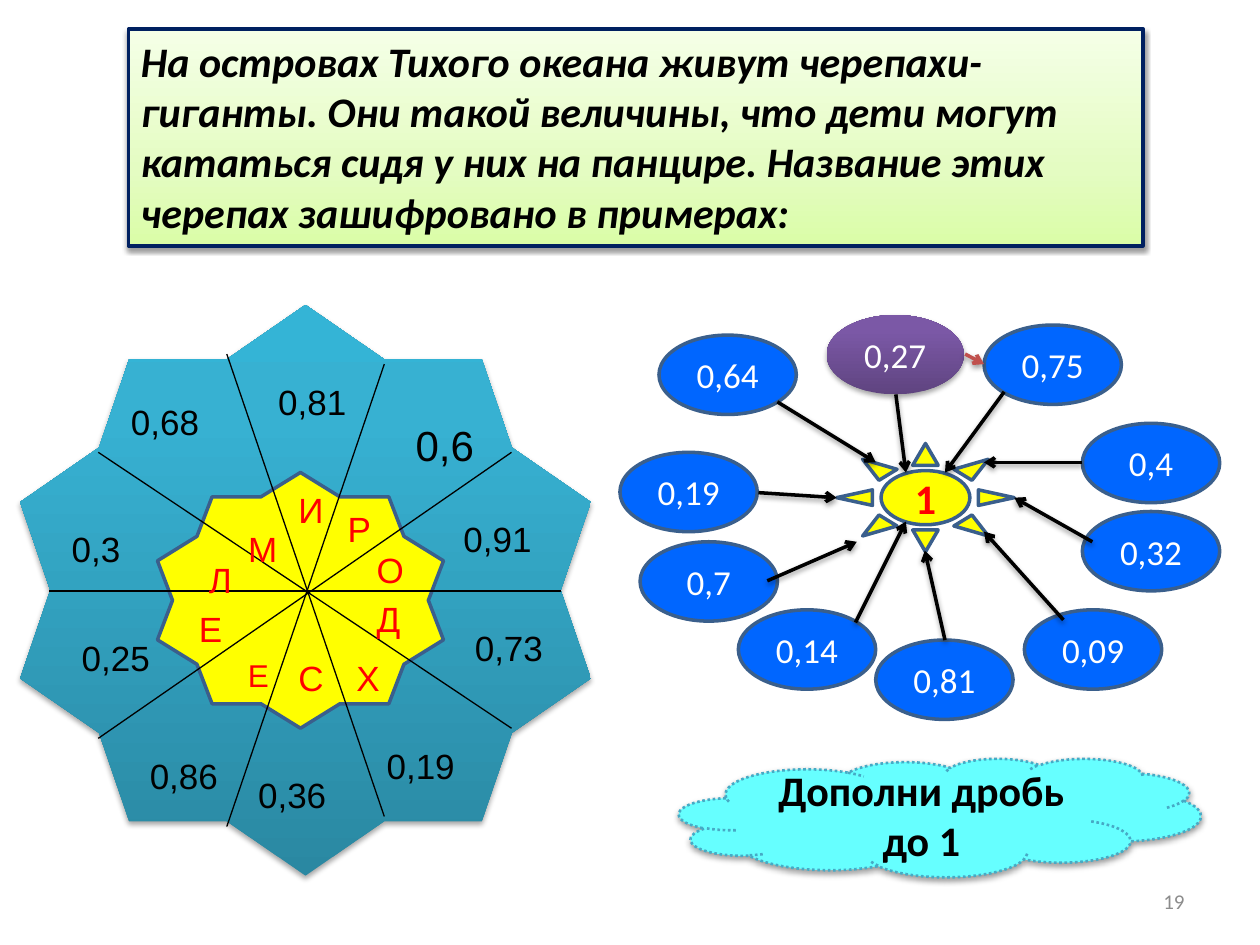
import copy

import pptx
import pptx.dml.color
import pptx.enum.dml
import pptx.enum.shapes
import pptx.enum.text
import pptx.oxml
import pptx.oxml.ns
import pptx.util

Inches = pptx.util.Inches
Pt = pptx.util.Pt
SHAPE = pptx.enum.shapes.MSO_SHAPE
ALIGN = pptx.enum.text.PP_ALIGN
ANCHOR = pptx.enum.text.MSO_ANCHOR
qn = pptx.oxml.ns.qn

COLORS = {
    "black": "000000", "white": "FFFFFF", "red": "FF0000", "gray": "8C8C8C",
    "navy": "002060", "outline": "3A5F8C", "blue": "0066FF", "yellow": "FFFF00",
    "cyan": "66FFFF", "teal": "46AAC5", "brick": "C0504D",
}
# Gradient stops run from the bottom edge to the top edge.
GRADIENTS = {
    "lime": [(0, "DAFDA7"), (0.35, "E4FCC2"), (1, "F5FFE7")],
    "sea": [(0, "2A88A2"), (0.8, "37B1D2"), (1, "34B4D6")],
    "purple": [(0, "5F4480"), (0.8, "7B58A6"), (1, "7C57A8")],
}
STORY = ("На островах Тихого океана живут черепахи-гиганты. Они такой величины, "
         "что дети могут кататься сидя у них на панцире. Название этих черепах "
         "зашифровано в примерах:")
WHEEL_SPOKES = [
    (1.8, 2.81, 3.05, 6.48), (3.05, 2.89, 1.8, 6.56), (0.78, 3.59, 4.06, 5.78),
    (0.39, 4.69, 4.45, 4.69), (0.78, 5.86, 4.06, 3.59),
]
# text, left, top, width, size
WHEEL_NUMBERS = [
    ("0,81", 2.11, 2.97, 0.86, 20), ("0,6", 3.2, 3.28, 0.7, 24),
    ("0,91", 3.58, 4.06, 0.87, 20), ("0,73", 3.67, 4.92, 0.86, 20),
    ("0,19", 2.97, 5.86, 0.86, 20), ("0,36", 1.95, 6.09, 0.78, 20),
    ("0,86", 1.09, 5.94, 0.78, 20), ("0,25", 0.55, 5, 0.86, 20),
    ("0,3", 0.47, 4.14, 0.78, 20), ("0,68", 0.94, 3.13, 0.91, 20),
]
WHEEL_LETTERS = [
    ("И", 2.27, 3.83, 0.23, 20), ("Р", 2.66, 3.98, 0.39, 20),
    ("О", 2.89, 4.3, 0.47, 20), ("Д", 2.89, 4.69, 0.47, 20),
    ("Х", 2.73, 5.16, 0.39, 20), ("С", 2.27, 5.16, 0.39, 20),
    ("Е", 1.87, 5.16, 0.23, 18), ("Е", 1.48, 4.77, 0.62, 20),
    ("Л", 1.56, 4.38, 0.31, 20), ("М", 1.87, 4.14, 0.55, 20),
]
FRACTIONS = [
    ("0,75", 7.81, 2.58), ("0,64", 5.23, 2.66), ("0,19", 4.92, 3.59),
    ("0,7", 5.08, 4.3), ("0,14", 5.86, 4.84), ("0,81", 6.95, 5.08),
    ("0,09", 8.13, 4.84), ("0,32", 8.59, 4.06), ("0,4", 8.59, 3.36),
]
SUN_ARROWS = [
    (7.97, 3.11, 7.5, 3.75), (6.02, 3.91, 6.64, 3.95), (6.09, 4.61, 6.8, 4.3),
    (6.79, 4.94, 7.19, 4.14), (7.5, 5.08, 7.34, 4.37), (8.67, 4.3, 8.05, 3.95),
    (8.59, 3.67, 7.81, 3.67), (7.11, 3.13, 7.19, 3.75),
    (6.17, 3.19, 6.95, 3.67), (8.44, 4.92, 7.81, 4.22),
]


def rgb(name):
    return pptx.dml.color.RGBColor.from_string(COLORS[name])


def add_shadow(shape, opacity=38, distance=1.6):
    properties = shape._element.spPr
    effects = properties.find(qn("a:effectLst"))
    if effects is None:
        effects = pptx.oxml.parse_xml(f"<a:effectLst {pptx.oxml.ns.nsdecls('a')}/>")
        properties.append(effects)
    effects.append(pptx.oxml.parse_xml(
        f"<a:outerShdw {pptx.oxml.ns.nsdecls('a')} blurRad='{Pt(3.1)}' "
        f"dist='{Pt(distance)}' dir='5400000' rotWithShape='0'>"
        f"<a:srgbClr val='000000'><a:alpha val='{opacity * 1000}'/></a:srgbClr>"
        "</a:outerShdw>"))


def fill_gradient(shape, name):
    shape.fill.gradient()
    shape.fill.gradient_angle = 90
    stop_list = shape._element.spPr.find(qn("a:gradFill")).find(qn("a:gsLst"))
    stop_list.insert(1, copy.deepcopy(stop_list[0]))
    for stop, (position, color) in zip(shape.fill.gradient_stops, GRADIENTS[name]):
        stop.position = position
        stop.color.rgb = pptx.dml.color.RGBColor.from_string(color)


def write(shape, text, size, color, font="Calibri", align=ALIGN.CENTER,
          anchor=ANCHOR.MIDDLE, bold=False, italic=False):
    frame = shape.text_frame
    frame.word_wrap = True
    frame.vertical_anchor = anchor
    para = frame.paragraphs[0]
    para.alignment = align
    span = para.add_run()
    span.text = text
    span.font.name = font
    span.font.size = Pt(size)
    span.font.color.rgb = rgb(color)
    span.font.bold = bold
    span.font.italic = italic


def add_shape(parent, kind, place, fill, outline=None, width=2):
    shape = parent.shapes.add_shape(kind, *map(Inches, place))
    shape.shadow.inherit = False
    if fill in GRADIENTS:
        fill_gradient(shape, fill)
    else:
        shape.fill.solid()
        shape.fill.fore_color.rgb = rgb(fill)
    if outline:
        shape.line.color.rgb = rgb(outline)
        shape.line.width = Pt(width)
    else:
        shape.line.fill.background()
    return shape


def add_label(parent, text, place, size, color, **style):
    box = parent.shapes.add_textbox(*map(Inches, place))
    write(box, text, size, color, **style)


def add_line(parent, ends, color="black", width=0.75, arrow=False):
    line = parent.shapes.add_connector(
        pptx.enum.shapes.MSO_CONNECTOR.STRAIGHT, *map(Inches, ends))
    line.line.color.rgb = rgb(color)
    line.line.width = Pt(width)
    properties = line._element.spPr
    properties.append(pptx.oxml.parse_xml(
        f"<a:effectLst {pptx.oxml.ns.nsdecls('a')}/>"))
    if arrow:
        properties.find(qn("a:ln")).append(pptx.oxml.parse_xml(
            f"<a:tailEnd {pptx.oxml.ns.nsdecls('a')} type='arrow'/>"))
        add_shadow(line)


def add_story(page):
    panel = add_shape(page, SHAPE.RECTANGLE, (1.02, 0.23, 8.05, 1.72),
                      "lime", "navy", 2.25)
    add_shadow(panel)
    write(panel, STORY, 24, "black", align=ALIGN.LEFT, anchor=ANCHOR.TOP,
          bold=True, italic=True)


def add_task_cloud(page):
    cloud = add_shape(page, SHAPE.CLOUD, (5.39, 6.02, 4.14, 0.94),
                      "cyan", "teal", 1.5)
    cloud.line.dash_style = pptx.enum.dml.MSO_LINE.ROUND_DOT
    add_shadow(cloud)
    write(cloud, "Дополни дробь до 1", 24, "black", bold=True)


def add_cipher_wheel(page):
    wheel = page.shapes.add_group_shape()
    star = add_shape(wheel, SHAPE.STAR_10_POINT, (0.16, 2.42, 4.53, 4.53), "sea")
    add_shadow(star, 35, 1.8)
    add_shape(wheel, SHAPE.STAR_10_POINT, (1.25, 3.75, 2.27, 2.03),
              "yellow", "outline")
    for ends in WHEEL_SPOKES:
        add_line(wheel, ends)
    for labels, color in ((WHEEL_NUMBERS, "black"), (WHEEL_LETTERS, "red")):
        for text, left, top, width, size in labels:
            add_label(wheel, text, (left, top, width, size / 45), size, color,
                      font="Arial", align=ALIGN.LEFT, anchor=ANCHOR.TOP)


def add_fraction_sun(page):
    group = page.shapes.add_group_shape()
    for text, left, top in FRACTIONS:
        oval = add_shape(group, SHAPE.OVAL, (left, top, 1.09, 0.63),
                         "blue", "outline")
        write(oval, text, 20, "white")
    start = add_shape(group, SHAPE.OVAL, (6.56, 2.5, 1.09, 0.63), "purple")
    add_shadow(start, 35, 1.8)
    write(start, "0,27", 20, "white")
    sun = add_shape(group, SHAPE.SUN, (6.64, 3.52, 1.41, 0.86), "yellow", "outline")
    write(sun, "1", 24, "red", bold=True)
    for ends in SUN_ARROWS:
        add_line(group, ends, width=2, arrow=True)
    add_line(group, (7.66, 2.81, 7.81, 2.89), "brick", 2, arrow=True)


def main():
    deck = pptx.Presentation()
    deck.slide_width, deck.slide_height = Inches(10), Inches(7.5)
    page = deck.slides.add_slide(deck.slide_layouts.get_by_name("Blank"))
    add_label(page, "19", (7.17, 6.95, 2.33, 0.4), 12, "gray", align=ALIGN.RIGHT)
    add_story(page)
    add_task_cloud(page)
    add_cipher_wheel(page)
    add_fraction_sun(page)
    deck.save("out.pptx")


if __name__ == "__main__":
    main()
